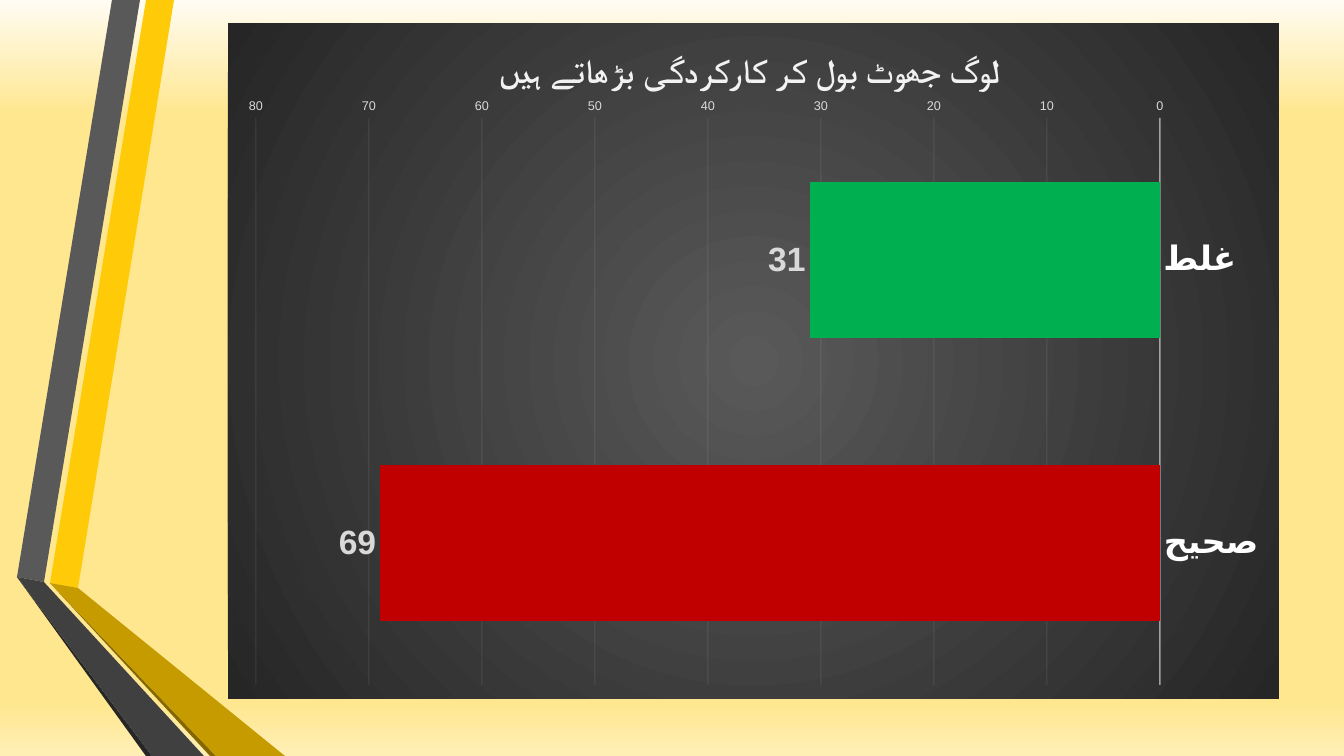
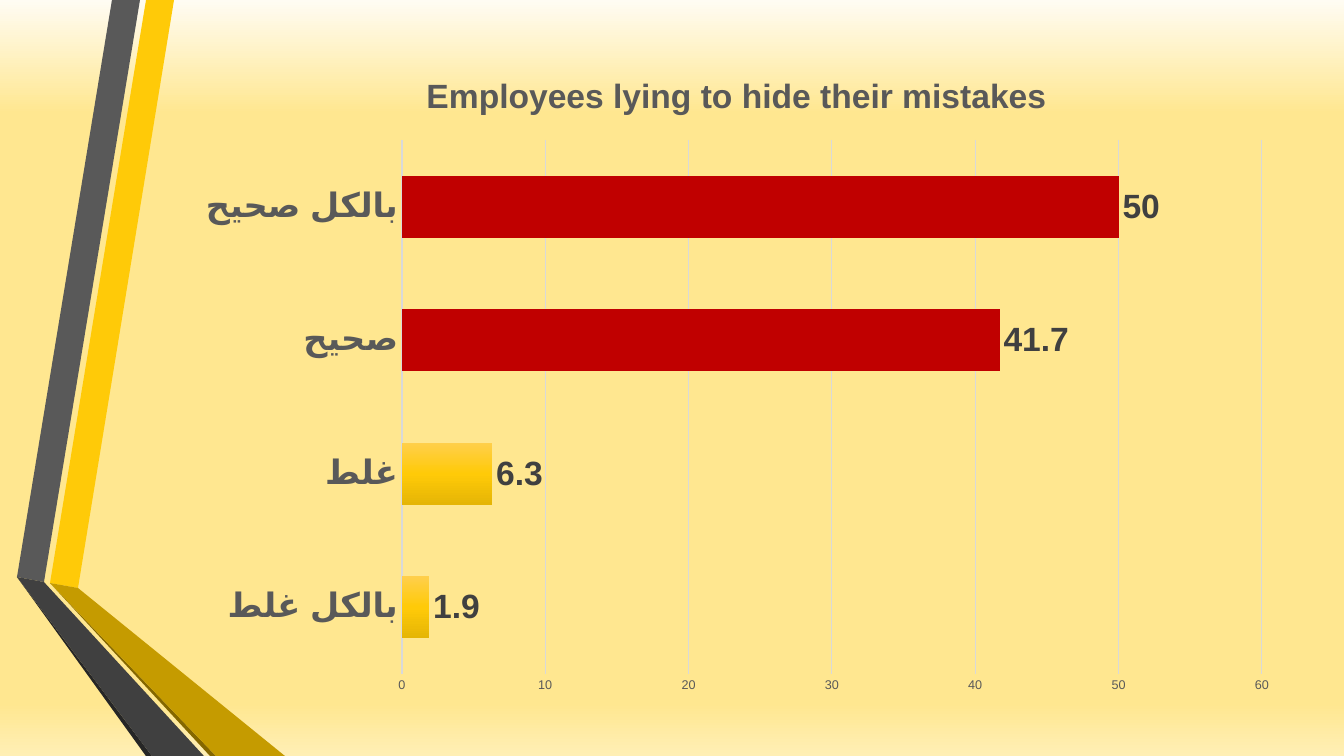
"""Build two survey slides with bar charts on a shared yellow background."""
from dataclasses import dataclass

from pptx import Presentation, oxml
from pptx.chart.data import CategoryChartData
from pptx.dml.color import RGBColor
from pptx.enum import chart as kinds
from pptx.enum import lang
from pptx.oxml import ns
from pptx.util import Pt

PX = 914400 / 100.8
WIDTH, HEIGHT = 1344, 756
FONT = "Arial"
RED, GREEN, GREY = "C00000", "00B050", "595959"
PAGE_STOPS = [(0, "FFFCF3"), (15, "FFE790"), (93, "FFE790"), (100, "FFEFB5")]
PANEL_STOPS = [(0, GREY), (100, "262626")]
BAR_STOPS = [(0, "FFCF4C"), (50, "FFCA08"), (100, "E5B505")]
RIBBONS = [
    ("FFCA08", [(50, 583), (78, 588), (174, 0), (146, 0)]),
    (GREY, [(140, 0), (112, 0), (17, 577), (44, 582)]),
    ("262626", [(17, 577), (146, 756), (152, 756)]),
    ("846700", [(50, 583), (210, 756), (216, 756)]),
    ("C59B00", [(50, 583), (216, 756), (285, 756), (78, 588)]),
    ("404040", [(17, 577), (152, 756), (204, 756), (44, 582)]),
]


@dataclass
class Survey:
    """Content and look of one bar chart."""
    title: str
    answers: dict
    box: tuple
    plot: tuple
    maximum: int
    gap: int
    overlap: int
    bar_colors: dict
    title_color: str
    category_color: str
    tick_color: str
    label_color: str
    axis_line: tuple
    grid_line: tuple
    title_font: str = FONT
    language: lang.MSO_LANGUAGE_ID = lang.MSO_LANGUAGE_ID.ENGLISH_US
    reverse: bool = False
    panel: bool = False


SURVEYS = [
    Survey(
        title="لوگ جھوٹ بول کر کارکردگی بڑھاتے ہیں ",
        answers={"غلط": 31, "صحیح": 69},
        box=(228, 23, 1051, 676), plot=(256, 118, 904, 567),
        maximum=80, gap=82, overlap=-30,
        bar_colors={0: GREEN, 1: RED},
        title_color="F2F2F2", category_color="FFFFFF",
        tick_color="D9D9D9", label_color="D9D9D9",
        axis_line=("F2F2F2", 1, 54), grid_line=("F2F2F2", 0.75, 10),
        title_font="Roboto", language=lang.MSO_LANGUAGE_ID.URDU,
        reverse=True, panel=True),
    Survey(
        title="Employees lying to hide their mistakes",
        answers={"بالکل غلط": 1.9, "غلط": 6.3, "صحیح": 41.7, "بالکل صحیح": 50},
        box=(183, 49, 1107, 656), plot=(402, 140, 860, 534),
        maximum=60, gap=115, overlap=-20,
        bar_colors={2: RED, 3: RED},
        title_color=GREY, category_color=GREY,
        tick_color=GREY, label_color="404040",
        axis_line=("D9D9D9", 1, 100), grid_line=("D9D9D9", 0.75, 100)),
]


def px(length):
    """Turn pixels into EMU."""
    return round(length * PX)


def color(value):
    """Turn a hex string into a colour."""
    return RGBColor.from_string(value)


def gradient(stops, radial=False):
    """Return a vertical or radial gradient fill element."""
    marks = "".join(
        f'<a:gs pos="{place * 1000}"><a:srgbClr val="{value}"/></a:gs>'
        for place, value in stops)
    shade = ('<a:path path="circle"><a:fillToRect l="50000" t="50000" r="50000" '
             'b="50000"/></a:path>' if radial else '<a:lin ang="5400000" scaled="0"/>')
    return oxml.parse_xml(
        f'<a:gradFill {ns.nsdecls("a")} rotWithShape="1">'
        f'<a:gsLst>{marks}</a:gsLst>{shade}</a:gradFill>')


def fill_gradient(holder, fill, stops):
    """Give the first fill inside a holder element a vertical gradient."""
    fill.solid()
    solid = holder.find(".//" + ns.qn("a:solidFill"))
    solid.getparent().replace(solid, gradient(stops))


def style_font(font, size, value, bold=False, name=FONT):
    """Set the size, colour, weight and typeface of a font."""
    font.size, font.bold, font.name = Pt(size), bold, name
    font.color.rgb = color(value)


def style_line(line, value, width, opacity):
    """Set the colour, width and opacity in percent of a line."""
    line.color.rgb = color(value)
    line.width = Pt(width)
    if opacity < 100:
        tint = line._ln.find(".//" + ns.qn("a:srgbClr"))
        tint.append(oxml.parse_xml(
            f'<a:alpha {ns.nsdecls("a")} val="{opacity * 1000}"/>'))


def add_ribbons(page):
    """Draw the folded ribbons at the left edge."""
    for value, corners in RIBBONS:
        builder = page.shapes.build_freeform(*corners[0], scale=PX)
        builder.add_line_segments(corners[1:], close=True)
        ribbon = builder.convert_to_shape()
        ribbon.shadow.inherit = False
        ribbon.fill.solid()
        ribbon.fill.fore_color.rgb = color(value)
        ribbon.line.fill.background()


def place_plot(chart, box, plot):
    """Fix the inner plot area inside the chart frame."""
    left, top, width, height = box
    shares = {"x": (plot[0] - left) / width, "y": (plot[1] - top) / height,
              "w": plot[2] / width, "h": plot[3] / height}
    entries = "".join(f'<c:{key} val="{share:.4f}"/>' for key, share in shares.items())
    area = chart._chartSpace.find(".//" + ns.qn("c:plotArea"))
    for layout in area.findall(ns.qn("c:layout")):
        area.remove(layout)
    area.insert(0, oxml.parse_xml(
        f'<c:layout {ns.nsdecls("c")}><c:manualLayout><c:layoutTarget val="inner"/>'
        f'<c:xMode val="edge"/><c:yMode val="edge"/>{entries}'
        '</c:manualLayout></c:layout>'))


def add_panel(chart):
    """Put a dark radial panel behind the chart."""
    panel = oxml.parse_xml(f'<c:spPr {ns.nsdecls("c", "a")}/>')
    panel.append(gradient(PANEL_STOPS, radial=True))
    panel.append(oxml.parse_xml(f'<a:ln {ns.nsdecls("a")}><a:noFill/></a:ln>'))
    chart._chartSpace.find(ns.qn("c:chart")).addnext(panel)


def style_title(chart, survey):
    """Write the chart title, with its typeface for Arabic script too."""
    chart.has_title = True
    chart.chart_title.include_in_layout = False
    span = chart.chart_title.text_frame.paragraphs[0].add_run()
    span.text = survey.title
    style_font(span.font, 24, survey.title_color, True, survey.title_font)
    span.font.language_id = survey.language
    span.font._element.find(ns.qn("a:latin")).addnext(oxml.parse_xml(
        f'<a:cs {ns.nsdecls("a")} typeface="{survey.title_font}"/>'))


def style_axes(chart, survey):
    """Format both axes and the gridlines."""
    answers, scale = chart.category_axis, chart.value_axis
    for axis in (answers, scale):
        axis.major_tick_mark = axis.minor_tick_mark = kinds.XL_TICK_MARK.NONE
        axis.reverse_order = survey.reverse
    style_font(answers.tick_labels.font, 24, survey.category_color, True)
    style_line(answers.format.line, *survey.axis_line)
    style_font(scale.tick_labels.font, 9, survey.tick_color)
    scale.format.line.fill.background()
    scale.minimum_scale, scale.maximum_scale, scale.major_unit = 0, survey.maximum, 10
    style_line(scale.major_gridlines.format.line, *survey.grid_line)


def style_bars(chart, survey):
    """Colour the bars and add their value labels."""
    bars = chart.plots[0]
    bars.vary_by_categories = False
    bars.gap_width, bars.overlap = survey.gap, survey.overlap
    series = bars.series[0]
    fill_gradient(series._element, series.format.fill, BAR_STOPS)
    for index, value in survey.bar_colors.items():
        fill = series.points[index].format.fill
        fill.solid()
        fill.fore_color.rgb = color(value)
    labels = series.data_labels
    labels.show_value = True
    labels.position = kinds.XL_LABEL_POSITION.OUTSIDE_END
    style_font(labels.font, 24, survey.label_color, True)


def add_survey(page, survey):
    """Add one formatted bar chart."""
    values = CategoryChartData()
    values.categories = list(survey.answers)
    values.add_series("Series 1", list(survey.answers.values()))
    chart = page.shapes.add_chart(
        kinds.XL_CHART_TYPE.BAR_CLUSTERED, *map(px, survey.box), values).chart
    style_font(chart.font, 10, "000000")
    chart.has_legend = False
    style_title(chart, survey)
    style_axes(chart, survey)
    style_bars(chart, survey)
    place_plot(chart, survey.box, survey.plot)
    if survey.panel:
        add_panel(chart)


def main():
    """Build and save the deck."""
    deck = Presentation()
    deck.slide_width, deck.slide_height = px(WIDTH), px(HEIGHT)
    master = deck.slide_master
    fill_gradient(master.element, master.background.fill, PAGE_STOPS)
    for survey in SURVEYS:
        page = deck.slides.add_slide(deck.slide_layouts[6])
        add_ribbons(page)
        add_survey(page, survey)
    deck.save("out.pptx")


if __name__ == "__main__":
    main()
